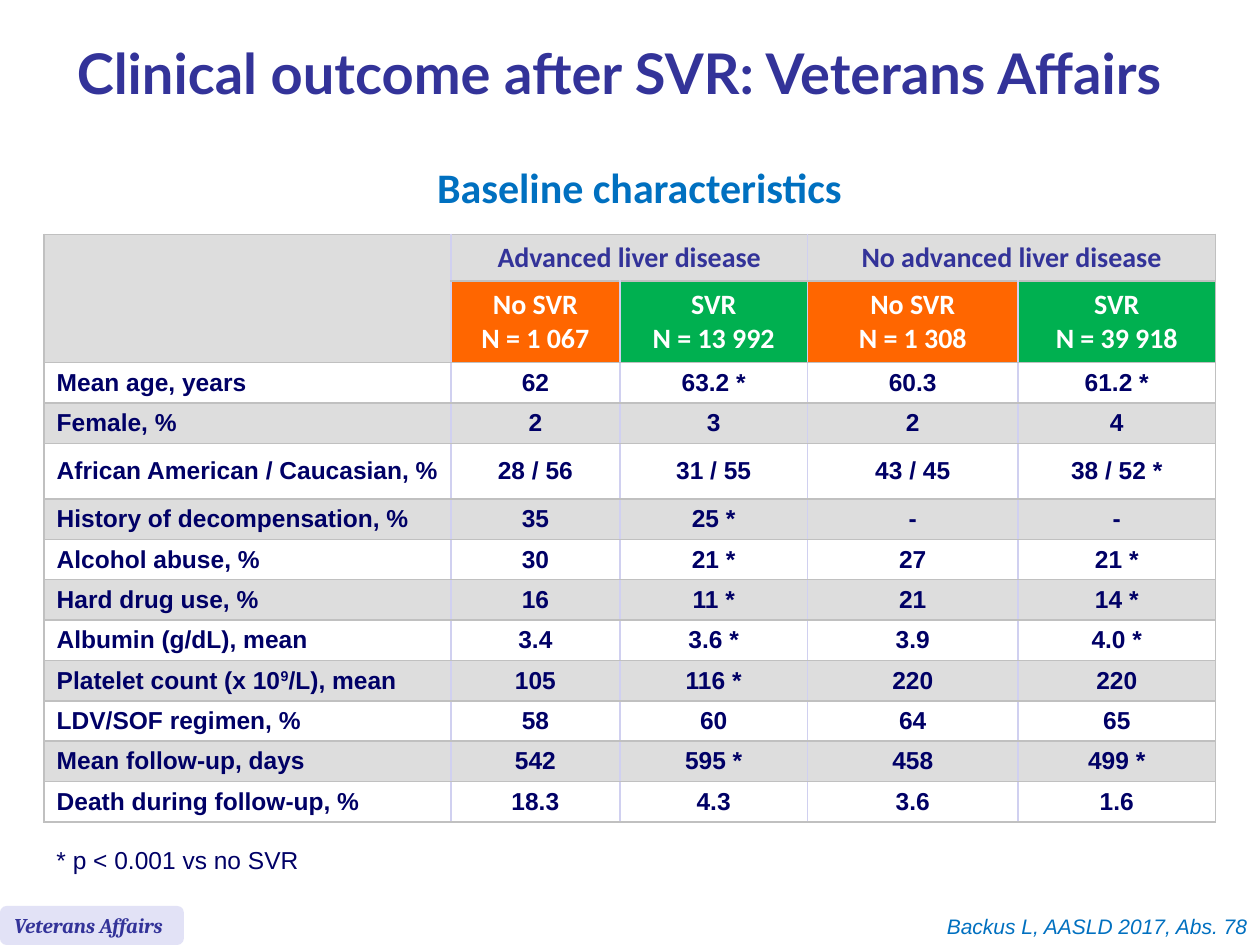
from dataclasses import dataclass
from typing import Optional

from lxml.etree import SubElement
from pptx import Presentation
from pptx.dml.color import RGBColor
from pptx.enum.shapes import MSO_SHAPE
from pptx.enum.text import MSO_ANCHOR, MSO_AUTO_SIZE, PP_ALIGN
from pptx.oxml.ns import qn
from pptx.util import Pt

NAVY = RGBColor(0x00, 0x00, 0x66)
INDIGO = RGBColor(0x33, 0x33, 0x99)
BLUE = RGBColor(0x00, 0x70, 0xC0)
WHITE = RGBColor(0xFF, 0xFF, 0xFF)
BAND = RGBColor(0xDD, 0xDD, 0xDD)
ORANGE = RGBColor(0xFF, 0x66, 0x00)
GREEN = RGBColor(0x00, 0xB0, 0x50)
TAG_FILL = RGBColor(0xE2, 0xE2, 0xF6)
GREY_LINE = RGBColor(0xC0, 0xC0, 0xC0)
LILAC_LINE = RGBColor(0xD0, 0xD0, 0xF0)


@dataclass(frozen=True)
class Style:
    font: str
    size: float
    color: RGBColor
    bold: bool = False
    italic: bool = False


@dataclass(frozen=True)
class Caption:
    text: str
    left: float
    top: float
    width: float
    height: float
    style: Style
    align: PP_ALIGN = PP_ALIGN.LEFT
    wrap: bool = True
    line_spacing: Optional[float] = None


TITLE_STYLE = Style("Lato", 32, INDIGO, bold=True)
GROUP_STYLE = Style("Calibri", 16, INDIGO, bold=True)
ARM_STYLE = Style("Calibri", 16, WHITE, bold=True)
BODY_STYLE = Style("Arial", 14, NAVY, bold=True)
TAG_STYLE = Style("Cambria", 12, INDIGO, bold=True, italic=True)

CAPTIONS = [
    Caption("Baseline characteristics", 25.2, 102.2, 680.4, 25.2,
            Style("Calibri", 24, BLUE, bold=True), PP_ALIGN.CENTER, line_spacing=15.2),
    Caption("Backus L, AASLD 2017, Abs. 78", 331.9, 518.4, 388.1, 21.6,
            Style("Arial", 12, BLUE, italic=True), PP_ALIGN.RIGHT),
    Caption("* p < 0.001 vs no SVR", 25.2, 479.5, 154.1, 24.5,
            Style("Arial", 14, NAVY), wrap=False),
]

GROUPS = ["Advanced liver disease", "No advanced liver disease"]
ARMS = [
    ("No SVR", "N = 1 067", ORANGE),
    ("SVR", "N = 13 992", GREEN),
    ("No SVR", "N = 1 308", ORANGE),
    ("SVR", "N = 39 918", GREEN),
]
# A caret pair encloses superscript text
ROWS = [
    ("Mean age, years", "62", "63.2 *", "60.3", "61.2 *"),
    ("Female, %", "2", "3", "2", "4"),
    ("African American / Caucasian, %", "28 / 56", "31 / 55", "43 / 45", "38 / 52 *"),
    ("History of decompensation, %", "35", "25 *", "-", "-"),
    ("Alcohol abuse, %", "30", "21 *", "27", "21 *"),
    ("Hard drug use, %", "16", "11 *", "21", "14 *"),
    ("Albumin (g/dL), mean", "3.4", "3.6 *", "3.9", "4.0 *"),
    ("Platelet count (x 10^9^/L), mean", "105", "116 *", "220", "220"),
    ("LDV/SOF regimen, %", "58", "60", "64", "65"),
    ("Mean follow-up, days", "542", "595 *", "458", "499 *"),
    ("Death during follow-up, %", "18.3", "4.3", "3.6", "1.6"),
]
COLUMN_WIDTHS = [232.5, 96.5, 107.3, 120.2, 113]
HEADER_HEIGHTS = [26.8, 46.5]
ROW_HEIGHT, TALL_ROW_HEIGHT, TALL_ROW = 23.1, 31.8, 2


def write_paragraph(paragraph, text: str, style: Style, align: PP_ALIGN) -> None:
    paragraph.alignment = align
    for index, part in enumerate(text.split("^")):
        run = paragraph.add_run()
        run.text = part
        run.font.name = style.font
        run.font.size = Pt(style.size)
        run.font.bold = style.bold
        run.font.italic = style.italic
        run.font.color.rgb = style.color
        if index % 2:
            run.font._element.set("baseline", "30000")


def add_caption(slide, caption: Caption) -> None:
    shape = slide.shapes.add_textbox(Pt(caption.left), Pt(caption.top),
                                     Pt(caption.width), Pt(caption.height))
    shape.text_frame.word_wrap = caption.wrap
    paragraph = shape.text_frame.paragraphs[0]
    if caption.line_spacing:
        paragraph.line_spacing = Pt(caption.line_spacing)
    write_paragraph(paragraph, caption.text, caption.style, caption.align)


def set_borders(cell, left: RGBColor, right: RGBColor) -> None:
    properties = cell._tc.get_or_add_tcPr()
    sides = [("a:lnL", left), ("a:lnR", right), ("a:lnT", GREY_LINE), ("a:lnB", GREY_LINE)]
    for position, (tag, color) in enumerate(sides):
        line = SubElement(properties, qn(tag), w=str(Pt(1)))
        fill = SubElement(line, qn("a:solidFill"))
        SubElement(fill, qn("a:srgbClr"), val=str(color))
        properties.insert(position, line)


def fill_cell(cell, color: RGBColor, lines: list[str], style: Style,
              align: PP_ALIGN = PP_ALIGN.CENTER) -> None:
    cell.fill.solid()
    cell.fill.fore_color.rgb = color
    cell.vertical_anchor = MSO_ANCHOR.MIDDLE
    for index, text in enumerate(lines):
        frame = cell.text_frame
        paragraph = frame.add_paragraph() if index else frame.paragraphs[0]
        write_paragraph(paragraph, text, style, align)


def add_baseline_table(slide) -> None:
    heights = HEADER_HEIGHTS + [
        TALL_ROW_HEIGHT if index == TALL_ROW else ROW_HEIGHT for index in range(len(ROWS))]
    frame = slide.shapes.add_table(len(heights), len(COLUMN_WIDTHS), Pt(25.2), Pt(133.9),
                                   Pt(sum(COLUMN_WIDTHS)), Pt(sum(heights)))
    table = frame.table
    for column, width in zip(table.columns, COLUMN_WIDTHS):
        column.width = Pt(width)
    for row, height in zip(table.rows, heights):
        row.height = Pt(height)

    # Header rows
    for row in range(2):
        fill_cell(table.cell(row, 0), BAND, [], GROUP_STYLE)
    table.cell(0, 0).merge(table.cell(1, 0))
    for index, group in enumerate(GROUPS):
        first = 1 + 2 * index
        fill_cell(table.cell(0, first), BAND, [group], GROUP_STYLE)
        fill_cell(table.cell(0, first + 1), BAND, [], GROUP_STYLE)
        table.cell(0, first).merge(table.cell(0, first + 1))
    for column, (arm, count, color) in enumerate(ARMS, start=1):
        fill_cell(table.cell(1, column), color, [arm, count], ARM_STYLE)

    # Banded data rows
    for index, values in enumerate(ROWS):
        color = BAND if index % 2 else WHITE
        for column, value in enumerate(values):
            align = PP_ALIGN.CENTER if column else PP_ALIGN.LEFT
            fill_cell(table.cell(index + 2, column), color, [value], BODY_STYLE, align)

    # Grey frame, lilac inner verticals
    last = len(COLUMN_WIDTHS) - 1
    for row in range(len(heights)):
        for column in range(last + 1):
            spans_to_edge = row == 0 and column == last - 1
            set_borders(table.cell(row, column),
                        LILAC_LINE if column else GREY_LINE,
                        GREY_LINE if column == last or spans_to_edge else LILAC_LINE)


def add_title(slide) -> None:
    title = slide.shapes.title
    title.left, title.top, title.width, title.height = Pt(36.7), Pt(5.8), Pt(680.4), Pt(77)
    title.text_frame.auto_size = MSO_AUTO_SIZE.NONE
    title.text_frame.vertical_anchor = MSO_ANCHOR.MIDDLE
    paragraph = title.text_frame.paragraphs[0]
    paragraph.line_spacing = 0.85
    write_paragraph(paragraph, "Clinical outcome after SVR: Veterans Affairs",
                    TITLE_STYLE, PP_ALIGN.LEFT)


def add_study_tag(slide) -> None:
    shape = slide.shapes.add_shape(MSO_SHAPE.ROUNDED_RECTANGLE,
                                   Pt(0), Pt(517.7), Pt(105.1), Pt(22.3))
    shape.shadow.inherit = False
    shape.fill.solid()
    shape.fill.fore_color.rgb = TAG_FILL
    shape.line.fill.background()
    shape.text_frame.word_wrap = False
    shape.text_frame.vertical_anchor = MSO_ANCHOR.MIDDLE
    write_paragraph(shape.text_frame.paragraphs[0], "Veterans Affairs", TAG_STYLE, PP_ALIGN.LEFT)


def main() -> None:
    presentation = Presentation()
    presentation.slide_width, presentation.slide_height = Pt(720), Pt(540)
    slide = presentation.slides.add_slide(presentation.slide_layouts[5])
    add_title(slide)
    add_baseline_table(slide)
    add_study_tag(slide)
    for caption in CAPTIONS:
        add_caption(slide, caption)
    presentation.save("out.pptx")


if __name__ == "__main__":
    main()
